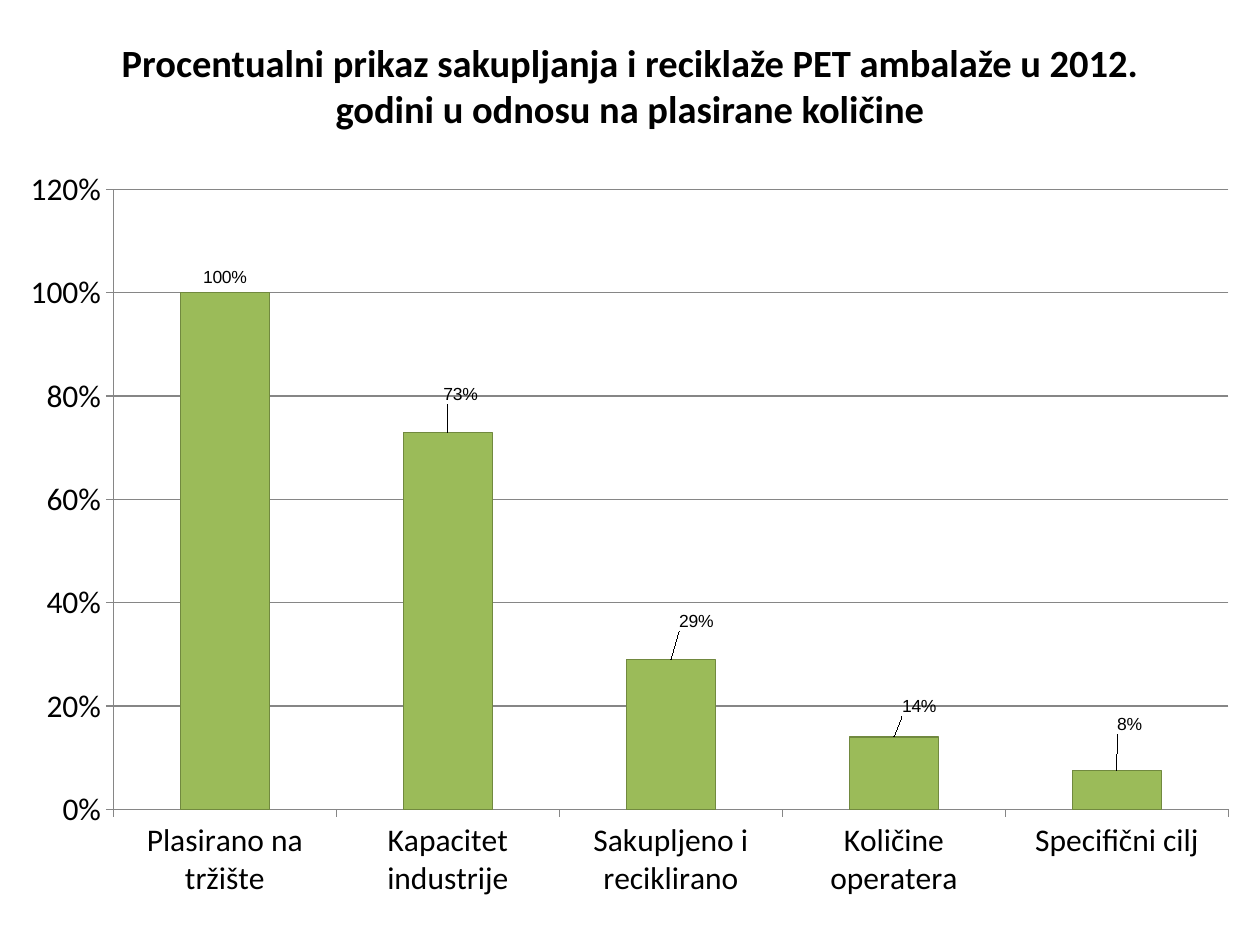
from dataclasses import dataclass

from lxml.etree import SubElement
from pptx import Presentation
from pptx.chart.data import CategoryChartData
from pptx.dml.color import RGBColor
from pptx.enum.chart import XL_CHART_TYPE, XL_LABEL_POSITION, XL_TICK_MARK
from pptx.enum.text import MSO_ANCHOR, PP_ALIGN
from pptx.oxml import parse_xml
from pptx.oxml.ns import nsdecls, qn
from pptx.util import Inches, Pt


@dataclass(frozen=True)
class Theme:
    font: str = "Calibri"
    label_font: str = "Arial"
    text: RGBColor = RGBColor(0, 0, 0)
    bar: RGBColor = RGBColor(0x9B, 0xBB, 0x59)
    bar_edge: RGBColor = RGBColor(0x71, 0x89, 0x3F)
    axis: RGBColor = RGBColor(0x86, 0x86, 0x86)
    title_size: Pt = Pt(22)
    axis_size: Pt = Pt(18)
    label_size: Pt = Pt(10)
    hairline: Pt = Pt(0.75)


def manual_layout(**values):
    layout = parse_xml(f"<c:layout {nsdecls('c')}><c:manualLayout/></c:layout>")
    for tag, value in values.items():
        SubElement(layout[0], qn(f"c:{tag}")).set("val", str(value))
    return layout


class SlideBuilder:
    """Places elements by shares of the slide's width and height."""

    def __init__(self, deck, theme):
        self.deck, self.theme = deck, theme
        self.slide = deck.slides.add_slide(deck.slide_layouts[6])

    def area(self, left, top, width, height):
        w, h = self.deck.slide_width, self.deck.slide_height
        return int(left * w), int(top * h), int(width * w), int(height * h)

    def style(self, font, size, name, bold=False):
        font.size, font.name, font.bold = size, name, bold
        font.color.rgb = self.theme.text

    def outline(self, line, color):
        line.color.rgb = color
        line.width = self.theme.hairline

    def title(self, text, *shares):
        frame = self.slide.shapes.add_textbox(*self.area(*shares)).text_frame
        frame.word_wrap = True
        frame.vertical_anchor = MSO_ANCHOR.MIDDLE
        frame.text = text
        heading = frame.paragraphs[0]
        heading.alignment = PP_ALIGN.CENTER
        self.style(heading.runs[0].font, self.theme.title_size, self.theme.font, True)

    def column_chart(self, rows, plot_area, *shares):
        data = CategoryChartData(number_format="0%")
        data.categories = [name for name, _, _ in rows]
        data.add_series("Series 1", [share for _, share, _ in rows])
        chart = self.slide.shapes.add_chart(
            XL_CHART_TYPE.COLUMN_CLUSTERED, *self.area(*shares), data).chart
        chart.has_legend = chart.has_title = False
        self.style(chart.font, self.theme.axis_size, self.theme.font)
        self.axes(chart)
        self.columns(chart.plots[0], [offset for _, _, offset in rows])

        # Fixed inner plot area
        x, y, w, h = plot_area
        plot = chart.element.find(".//" + qn("c:plotArea"))
        for old in plot.findall(qn("c:layout")):
            plot.remove(old)
        plot.insert(0, manual_layout(layoutTarget="inner", xMode="edge",
                                     yMode="edge", x=x, y=y, w=w, h=h))

    def axes(self, chart):
        values = chart.value_axis
        values.minimum_scale, values.maximum_scale, values.major_unit = 0, 1.2, 0.2
        values.has_major_gridlines = True
        values.tick_labels.number_format = "0%"
        values.tick_labels.number_format_is_linked = False
        self.outline(values.major_gridlines.format.line, self.theme.axis)
        for axis in (values, chart.category_axis):
            axis.major_tick_mark = XL_TICK_MARK.OUTSIDE
            self.outline(axis.format.line, self.theme.axis)

    def columns(self, plot, label_offsets):
        plot.gap_width = 150
        plot.vary_by_categories = False
        series = plot.series[0]
        series.format.fill.solid()
        series.format.fill.fore_color.rgb = self.theme.bar
        self.outline(series.format.line, self.theme.bar_edge)
        for index in range(len(label_offsets)):
            label = series.points[index].data_label
            self.style(label.font, self.theme.label_size, self.theme.label_font)
            label.position = XL_LABEL_POSITION.OUTSIDE_END

        # Nudge labels away from their columns
        labels = plot._element.findall(".//" + qn("c:dLbl"))
        for label, (x, y) in zip(labels, label_offsets):
            label.insert(1, manual_layout(x=x, y=y))


# Category, share of the quantity placed on the market, label offset
PET_ROWS = [
    ("Plasirano na tržište", 1, (0, 0)),
    ("Kapacitet industrije", 0.73, (0.01, -0.03)),
    ("Sakupljeno i reciklirano", 0.29, (0.02, -0.03)),
    ("Količine operatera", 0.14, (0.02, -0.02)),
    ("Specifični cilj", 0.075, (0.01, -0.04)),
]


def main():
    deck = Presentation()
    deck.slide_width, deck.slide_height = Inches(10), Inches(7.5)
    builder = SlideBuilder(deck, Theme())
    # Chart fills the slide below the title
    builder.column_chart(PET_ROWS, (0.09, 0.025, 0.885, 0.8), 0, 0.18, 1, 0.82)
    builder.title("Procentualni prikaz sakupljanja i reciklaže PET ambalaže u 2012. "
                  "godini u odnosu na plasirane količine", 0.05, 0.04, 0.9, 0.1)
    deck.save("out.pptx")


if __name__ == "__main__":
    main()
